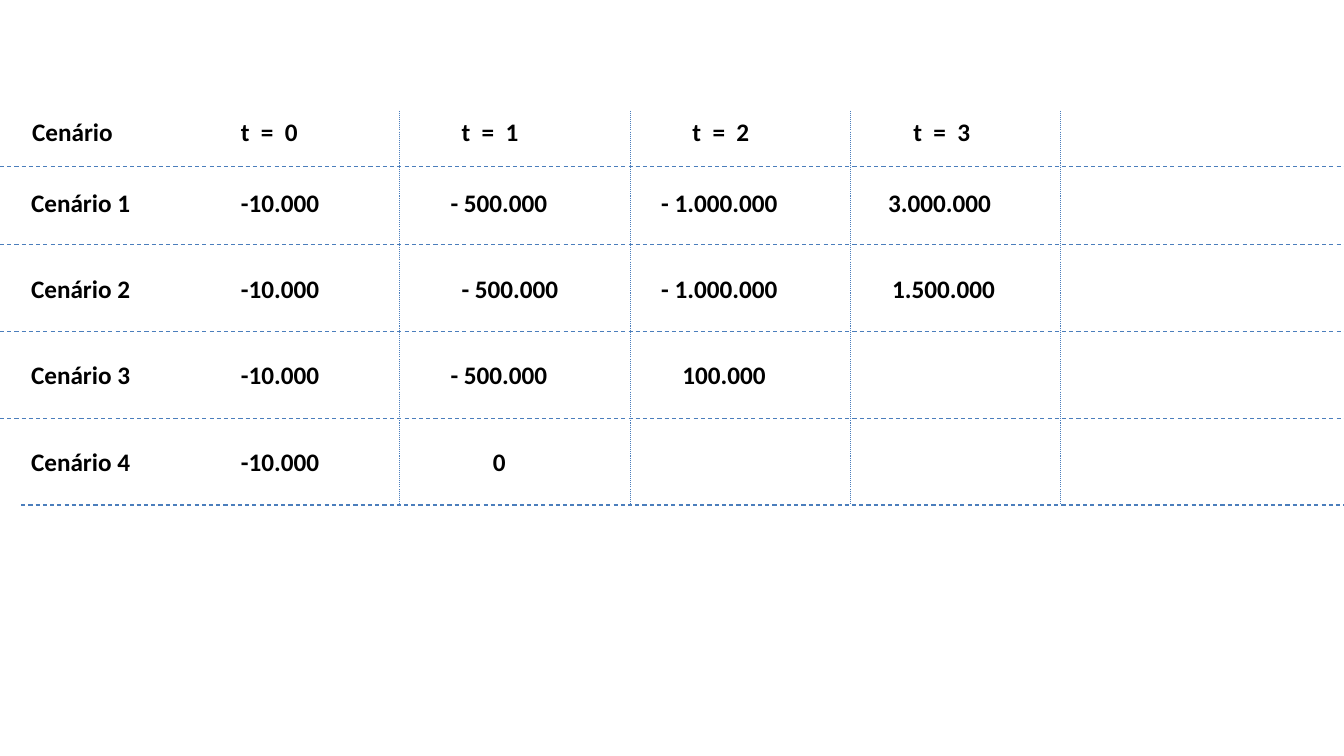
from pptx import Presentation
from pptx.dml.color import RGBColor
from pptx.enum.dml import MSO_LINE_DASH_STYLE as Dash
from pptx.enum.shapes import MSO_CONNECTOR as Connector
from pptx.enum.text import MSO_AUTO_SIZE as AutoSize
from pptx.oxml.ns import qn
from pptx.util import Inches, Pt
from lxml.etree import SubElement

PAGE_WIDTH, PAGE_HEIGHT = 13.33, 7.5
ROW_STEP = 0.86
ROW_TOPS = [1.1, 1.81] + [2.66 + ROW_STEP * i for i in range(3)]
RULE_TOPS = [1.65] + [2.43 + ROW_STEP * i for i in range(3)]
GRID_TOP, GRID_BOTTOM = 1.1, 5.01
COLUMN_EDGES = [3.96, 6.25, 8.44, 10.52]

# Each cell: left, width, text
TABLE_ROWS = [
    [(0.22, 1.01, "Cenário"), (2.29, 0.77, "t  =  0"), (4.48, 0.77, "t  =  1"),
     (6.77, 0.77, "t  =  2"), (8.96, 0.77, "t  =  3")],
    [(4.37, 1.17, "- 500.000"), (6.46, 1.37, "- 1.000.000"), (8.71, 1.23, "3.000.000")],
    [(4.48, 1.17, "- 500.000"), (6.46, 1.37, "- 1.000.000"), (8.75, 1.23, "1.500.000")],
    [(4.37, 1.17, "- 500.000"), (6.67, 1.04, "100.000")],
    [(4.79, 0.33, "0")],
]


def color(value):
    return RGBColor.from_string(value)


class ScenarioPage:
    font_style = {"name": "Calibri", "size": Pt(18), "bold": True}
    text_color = "000000"
    line_color = "4B7EBC"

    def __init__(self, deck):
        self.page = deck.slides.add_slide(deck.slide_layouts[6])

    def label(self, left, top, width, text):
        box = self.page.shapes.add_textbox(
            Inches(left), Inches(top), Inches(width), Inches(0.4))
        frame = box.text_frame
        frame.word_wrap = False
        frame.auto_size = AutoSize.SHAPE_TO_FIT_TEXT
        span = frame.paragraphs[0].add_run()
        span.text = text
        for name, value in self.font_style.items():
            setattr(span.font, name, value)
        span.font.color.rgb = color(self.text_color)

    def rule(self, start, end, dash):
        line = self.page.shapes.add_connector(
            Connector.STRAIGHT, *(Inches(value) for value in (*start, *end)))
        line.line.color.rgb = color(self.line_color)
        line.line.width = Pt(0.75)
        line.line.dash_style = dash
        SubElement(line._element.spPr, qn("a:effectLst"))


def main():
    deck = Presentation()
    deck.slide_width, deck.slide_height = Inches(PAGE_WIDTH), Inches(PAGE_HEIGHT)
    scenarios = ScenarioPage(deck)

    for top in RULE_TOPS:
        scenarios.rule((0, top), (PAGE_WIDTH, top), Dash.DASH)
    scenarios.rule((0.21, GRID_BOTTOM), (PAGE_WIDTH, GRID_BOTTOM), Dash.DASH)
    for left in COLUMN_EDGES:
        scenarios.rule((left, GRID_TOP), (left, GRID_BOTTOM), Dash.ROUND_DOT)

    for number, (top, cells) in enumerate(zip(ROW_TOPS, TABLE_ROWS)):
        if number:
            scenarios.label(0.21, top, 1.2, f"Cenário {number}")
            scenarios.label(2.29, top, 0.99, "-10.000")
        for left, width, text in cells:
            scenarios.label(left, top, width, text)

    deck.save("out.pptx")


if __name__ == "__main__":
    main()
